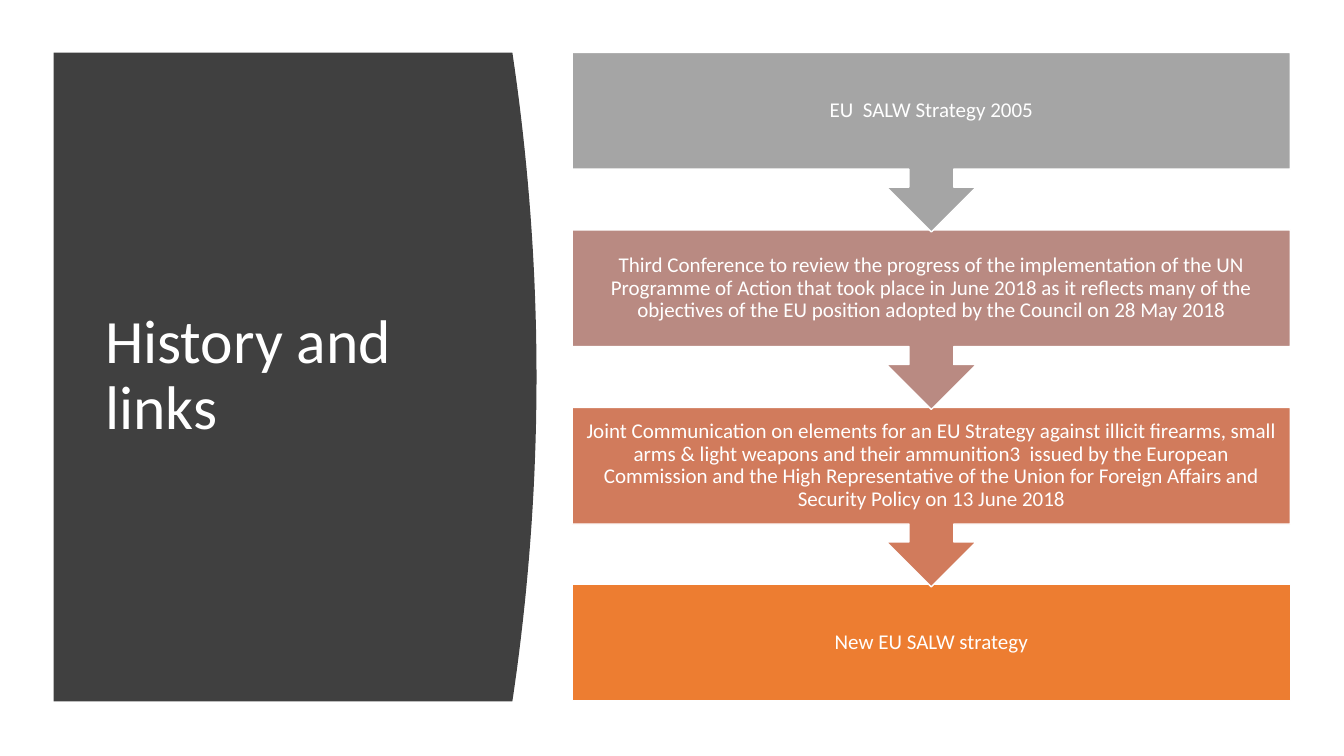
import pptx
import pptx.util
import pptx.dml.color
import pptx.enum.shapes
import pptx.enum.text

PX = 9525
DARK = pptx.dml.color.RGBColor(0x40, 0x40, 0x40)
WHITE = pptx.dml.color.RGBColor(0xFF, 0xFF, 0xFF)
GREY = pptx.dml.color.RGBColor(0xA5, 0xA5, 0xA5)
ROSE = pptx.dml.color.RGBColor(0xB9, 0x8A, 0x82)
CLAY = pptx.dml.color.RGBColor(0xD1, 0x7B, 0x5C)
ORANGE = pptx.dml.color.RGBColor(0xED, 0x7D, 0x31)
KIND = pptx.enum.shapes.MSO_SHAPE
ALIGN = pptx.enum.text.PP_ALIGN

STEPS = [
    ("EU  SALW Strategy 2005", GREY),
    ("Third Conference to review the progress of the implementation of the UN "
     "Programme of Action that took place in June 2018 as it reflects many of "
     "the objectives of the EU position adopted by the Council on 28 May 2018",
     ROSE),
    ("Joint Communication on elements for an EU Strategy against illicit "
     "firearms, small arms & light weapons and their ammunition3  issued by "
     "the European Commission and the High Representative of the Union for "
     "Foreign Affairs and Security Policy on 13 June 2018", CLAY),
    ("New EU SALW strategy", ORANGE),
]


def write(shape, text, size=15, color=WHITE, align=ALIGN.CENTER, inset=12):
    """Put formatted text, centred vertically, into a shape."""
    frame = shape.text_frame
    frame.word_wrap = True
    frame.auto_size = pptx.enum.text.MSO_AUTO_SIZE.NONE
    frame.vertical_anchor = pptx.enum.text.MSO_ANCHOR.MIDDLE
    frame.margin_left = frame.margin_right = inset * PX
    frame.margin_top = frame.margin_bottom = inset * PX
    frame.text = text
    para = frame.paragraphs[0]
    para.alignment = align
    para.line_spacing = 0.9
    font = para.runs[0].font
    font.name = "Calibri"
    font.size = pptx.util.Pt(size)
    font.color.rgb = color


def panel(slide, left, top, width, height, bulge=23, steps=40):
    """Draw the dark panel with its curved right edge, and the title on it."""
    edge = left + width - bulge
    points = []
    for i in range(steps + 1):
        t = i / steps
        points.append(((edge + 4 * bulge * t * (1 - t)) * PX,
                       (top + height * t) * PX))
    points.append((left * PX, (top + height) * PX))
    build = slide.shapes.build_freeform(left * PX, top * PX, scale=1.0)
    build.add_line_segments(points, close=True)
    shape = build.convert_to_shape()
    shape.shadow.inherit = False
    shape.fill.solid()
    shape.fill.fore_color.rgb = DARK
    shape.line.fill.background()

    title = slide.shapes.title
    title.left, title.top = (left + 39) * PX, (top + 57) * PX
    title.width, title.height = (width - 101) * PX, (height - 115) * PX
    write(title, "History and links", size=44, align=ALIGN.LEFT, inset=10)
    slide.shapes._spTree.append(title._element)


def flow(slide, left, top, width, height, body=110, overlap=2):
    """Stack the steps from top to bottom, each pointing to the next."""
    last = len(STEPS) - 1
    pitch = (height - body) / last
    for i, (text, color) in reversed(list(enumerate(STEPS))):
        kind = KIND.RECTANGLE if i == last else KIND.DOWN_ARROW_CALLOUT
        tall = body if i == last else pitch + overlap
        shape = slide.shapes.add_shape(
            kind, left * PX, round((top + i * pitch) * PX),
            width * PX, round(tall * PX))
        shape.shadow.inherit = False
        shape.fill.solid()
        shape.fill.fore_color.rgb = color
        shape.line.color.rgb = WHITE
        shape.line.width = pptx.util.Pt(1)
        write(shape, text)


def main():
    """Build the slide and save it."""
    deck = pptx.Presentation()
    deck.slide_width, deck.slide_height = 1280 * PX, 720 * PX
    slide = deck.slides.add_slide(deck.slide_layouts[5])
    panel(slide, 51, 50, 460, 618)
    flow(slide, 545, 50, 684, 617)
    deck.save("out.pptx")


if __name__ == "__main__":
    main()
